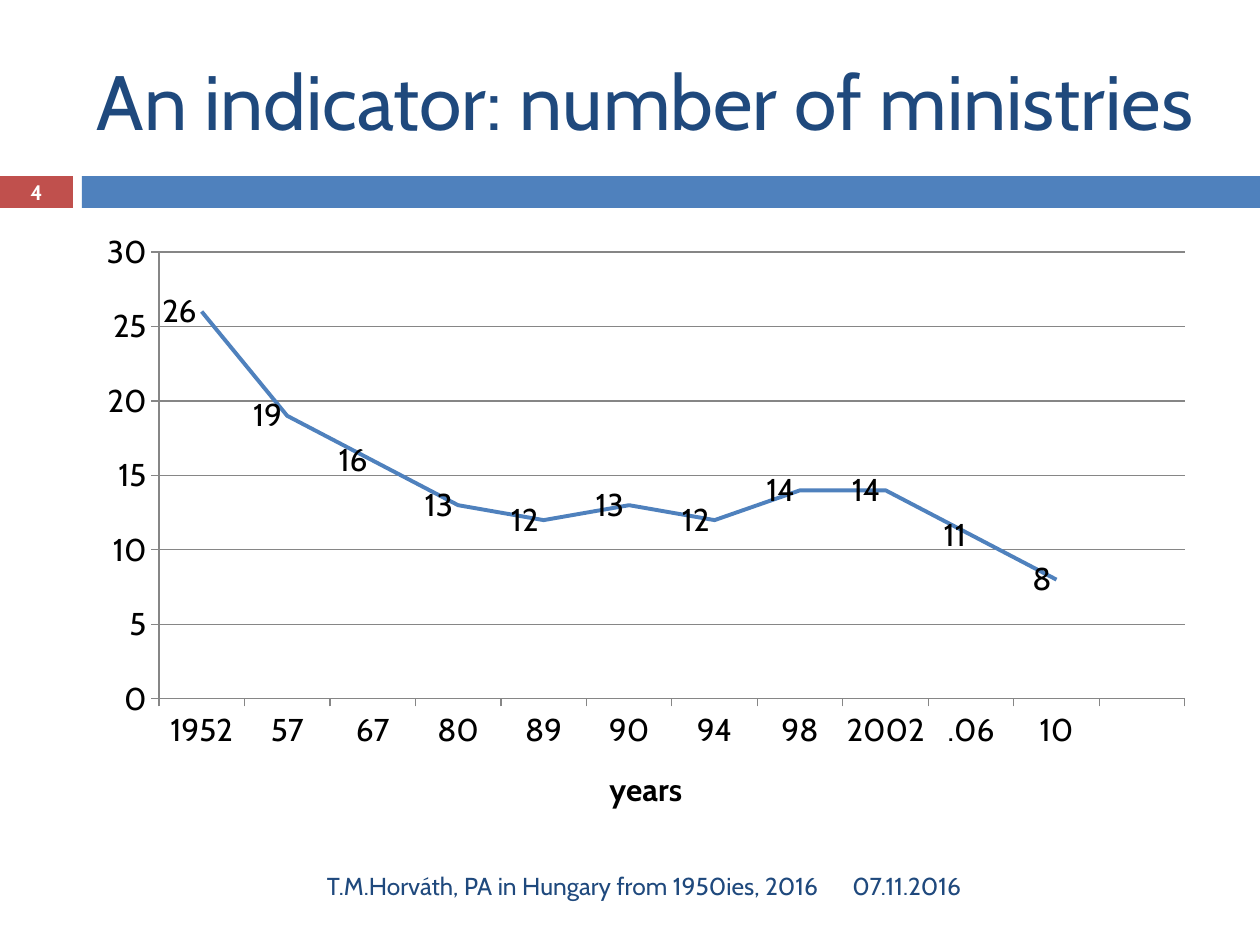
from lxml.etree import SubElement
from pptx import Presentation
from pptx.chart.data import CategoryChartData
from pptx.dml.color import RGBColor
from pptx.enum.chart import XL_CHART_TYPE as ChartType
from pptx.enum.chart import XL_LABEL_POSITION as LabelPosition
from pptx.enum.chart import XL_TICK_MARK as TickMark
from pptx.enum.shapes import MSO_SHAPE as Preset
from pptx.enum.text import MSO_ANCHOR as Anchor
from pptx.enum.text import MSO_AUTO_SIZE as AutoSize
from pptx.enum.text import PP_ALIGN as Align
from pptx.oxml.ns import qn
from pptx.util import Pt

EMU_PER_PX = 914400 / 126
FONT = "Cabin"
COLORS = {
    "navy": "1F497D",
    "blue": "4F81BD",
    "red": "C0504D",
    "white": "FFFFFF",
    "black": "000000",
    "grid": "868686",
}
MINISTRIES = {
    "1952": 26, "57": 19, "67": 16, "80": 13, "89": 12, "90": 13,
    "94": 12, "98": 14, "2002": 14, ".06": 11, "10": 8, "": None,
}
CHART_BOX = (84, 220, 1124, 620)
PLOT_BOX = (159, 252, 1026, 447)


def px(length):
    """Turn pixels into EMU."""
    return round(length * EMU_PER_PX)


def color(name):
    """Look up a named colour."""
    return RGBColor.from_string(COLORS[name])


def style_font(font, size, color_name, bold=False):
    """Apply the slide font with a size and colour."""
    font.name, font.size, font.bold = FONT, Pt(size), bold
    font.color.rgb = color(color_name)


def write_text(shape, text, size, color_name, align=Align.LEFT, bold=False):
    """Fill a shape with one formatted, vertically centred paragraph."""
    frame = shape.text_frame
    frame.text = text
    frame.word_wrap = True
    frame.auto_size = AutoSize.NONE
    frame.vertical_anchor = Anchor.MIDDLE
    paragraph = frame.paragraphs[0]
    paragraph.alignment = align
    style_font(paragraph.runs[0].font, size, color_name, bold)


def add_title(slide, text, box):
    """Place and format the title placeholder."""
    title = slide.shapes.title
    title.left, title.top, title.width, title.height = map(px, box)
    write_text(title, text, 44, "navy")


def add_label(slide, text, box, *style):
    """Add a text box with one line of text."""
    write_text(slide.shapes.add_textbox(*map(px, box)), text, *style)


def add_bar(slide, box, color_name):
    """Add a plain filled rectangle."""
    bar = slide.shapes.add_shape(Preset.RECTANGLE, *map(px, box))
    bar.shadow.inherit = False
    bar.fill.solid()
    bar.fill.fore_color.rgb = color(color_name)
    bar.line.fill.background()


def style_line(line, color_name, width):
    """Set the colour and width of a chart line."""
    line.color.rgb = color(color_name)
    line.width = Pt(width)


def fix_plot_area(chart, chart_box, plot_box):
    """Pin the inner plot area to its place within the chart."""
    plot_area = chart._chartSpace.chart.plotArea
    for old_layout in plot_area.findall(qn("c:layout")):
        plot_area.remove(old_layout)
    layout = SubElement(plot_area, qn("c:layout"))
    plot_area.insert(0, layout)
    left, top, width, height = chart_box
    settings = {
        "layoutTarget": "inner", "xMode": "edge", "yMode": "edge",
        "x": round((plot_box[0] - left) / width, 4),
        "y": round((plot_box[1] - top) / height, 4),
        "w": round(plot_box[2] / width, 4),
        "h": round(plot_box[3] / height, 4),
    }
    manual = SubElement(layout, qn("c:manualLayout"))
    for tag, value in settings.items():
        SubElement(manual, qn(f"c:{tag}")).set("val", str(value))


def style_axes(chart):
    """Format both axes, the gridlines and the axis title."""
    for axis in (chart.category_axis, chart.value_axis):
        axis.major_tick_mark = TickMark.OUTSIDE
        axis.minor_tick_mark = TickMark.NONE
        style_line(axis.format.line, "grid", 0.75)
    values = chart.value_axis
    values.minimum_scale, values.maximum_scale, values.major_unit = 0, 30, 5
    values.has_major_gridlines = True
    style_line(values.major_gridlines.format.line, "grid", 0.75)
    frame = chart.category_axis.axis_title.text_frame
    frame.text = "years"
    style_font(frame.paragraphs[0].runs[0].font, 18, "black", True)


def add_line_chart(slide, values, box, plot_box):
    """Add the line chart with a value label at each point."""
    data = CategoryChartData()
    data.categories = list(values)
    data.add_series("Series 1", list(values.values()))
    chart = slide.shapes.add_chart(ChartType.LINE, *map(px, box), data).chart
    chart.has_legend = chart.has_title = False
    style_font(chart.font, 18, "black")
    plot = chart.plots[0]
    plot.vary_by_categories = False
    series = plot.series[0]
    series.smooth = False
    style_line(series.format.line, "blue", 2.25)
    labels = series.data_labels
    labels.show_value = True
    labels.position = LabelPosition.LEFT
    style_font(labels.font, 18, "black")
    style_axes(chart)
    fix_plot_area(chart, box, plot_box)


def main():
    """Build the slide and save it."""
    presentation = Presentation()
    presentation.slide_width, presentation.slide_height = px(1260), px(945)
    slide = presentation.slides.add_slide(presentation.slide_layouts[5])
    add_bar(slide, (0, 176, 73, 32), "red")
    add_bar(slide, (82, 176, 1178, 32), "blue")
    add_title(slide, "An indicator: number of ministries", (84, 32, 1124, 136))
    add_label(slide, "07.11.2016", (840, 861, 368, 50), 14, "navy")
    add_label(slide, "T.M.Horváth, PA in Hungary from 1950ies, 2016",
              (84, 861, 747, 50), 14, "navy", Align.RIGHT)
    add_label(slide, "4", (0, 175, 73, 34), 12, "white", Align.CENTER, True)
    add_line_chart(slide, MINISTRIES, CHART_BOX, PLOT_BOX)
    presentation.save("out.pptx")


if __name__ == "__main__":
    main()
